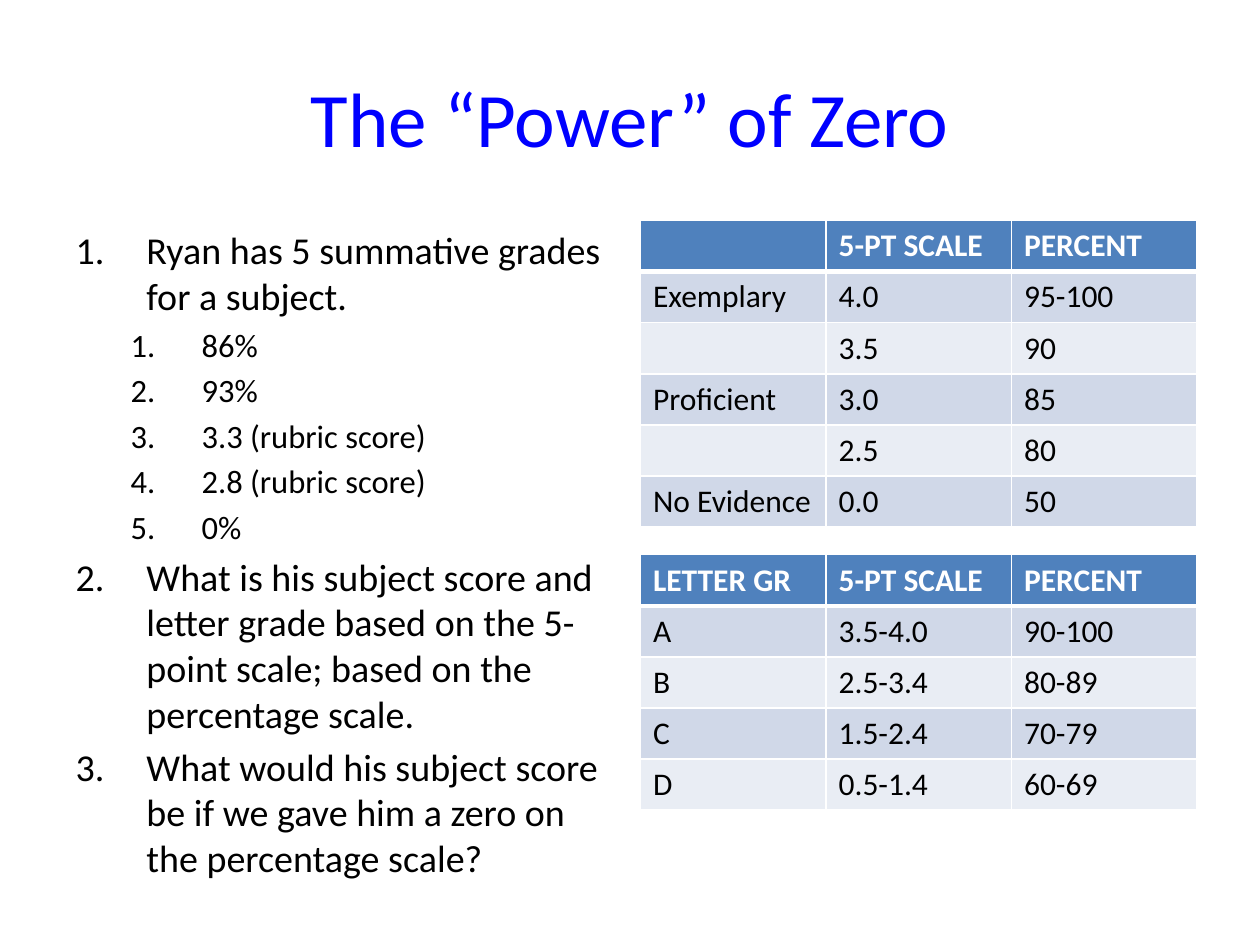
from dataclasses import dataclass

from lxml.etree import SubElement as add_node
from pptx import Presentation
from pptx.dml.color import RGBColor as Rgb
from pptx.enum.text import MSO_ANCHOR as Anchor, MSO_AUTO_SIZE as AutoSize, PP_ALIGN as Align
from pptx.oxml.ns import qn
from pptx.util import Pt

# Content
TITLE = "The “Power” of Zero"
QUESTIONS = [  # (level, text)
    (0, "Ryan has 5 summative grades for a subject."),
    (1, "86%"),
    (1, "93%"),
    (1, "3.3 (rubric score)"),
    (1, "2.8 (rubric score)"),
    (1, "0%"),
    (0, "What is his subject score and letter grade based on the 5-point scale; "
        "based on the percentage scale."),
    (0, "What would his subject score be if we gave him a zero on the percentage scale?"),
]
RUBRIC = [
    ("", "5-PT SCALE", "PERCENT"),
    ("Exemplary", "4.0", "95-100"),
    ("", "3.5", "90"),
    ("Proficient", "3.0", "85"),
    ("", "2.5", "80"),
    ("No Evidence", "0.0", "50"),
]
LETTERS = [
    ("LETTER GR", "5-PT SCALE", "PERCENT"),
    ("A", "3.5-4.0", "90-100"),
    ("B", "2.5-3.4", "80-89"),
    ("C", "1.5-2.4", "70-79"),
    ("D", "0.5-1.4", "60-69"),
]


@dataclass(frozen=True)
class Theme:
    font: str = "Calibri"
    title: str = "0000FF"
    text: str = "000000"
    white: str = "FFFFFF"
    header: str = "4F81BD"
    bands: tuple = ("D0D8E8", "E9EDF4")
    title_size: float = 44
    list_sizes: tuple = (21.7, 18.6)
    table_size: float = 18
    thin: float = 1
    thick: float = 3


THEME = Theme()

# Layout, in points
MARGIN, TOP, COLUMN_WIDTH = 36, 126, 318
TABLE_LEFT = 720 - MARGIN - COLUMN_WIDTH
ROW_HEIGHT = 29.2
LETTERS_TOP = 317
LIST_INDENTS, HANGING = (40.5, 72), 40.5


def write(para, text, size, color=THEME.text, bold=False, align=None):
    para.alignment = align
    span = para.add_run()
    span.text = text
    span.font.name = THEME.font
    span.font.size = Pt(size)
    span.font.bold = bold
    span.font.color.rgb = Rgb.from_string(color)


def place(box, left, top, width, height):
    box.left, box.top, box.width, box.height = map(Pt, (left, top, width, height))
    box.text_frame.auto_size = AutoSize.NONE
    box.text_frame.word_wrap = True


def number(para, level):
    para.level = level
    props = para._p.get_or_add_pPr()
    props.set("marL", str(Pt(LIST_INDENTS[level])))
    props.set("indent", str(-Pt(HANGING)))
    add_node(props, qn("a:buFont"), typeface=THEME.font)
    add_node(props, qn("a:buAutoNum"), type="arabicPeriod")


def border(cell, row):
    widths = {
        "lnL": THEME.thin,
        "lnR": THEME.thin,
        "lnT": THEME.thick if row == 1 else THEME.thin,
        "lnB": THEME.thick if row == 0 else THEME.thin,
    }
    props = cell._tc.get_or_add_tcPr()
    for side, width in widths.items():
        line = add_node(props, qn(f"a:{side}"), w=str(Pt(width)))
        add_node(add_node(line, qn("a:solidFill")), qn("a:srgbClr"), val=THEME.white)


def add_scale(page, rows, top):
    frame = page.shapes.add_table(len(rows), len(rows[0]), Pt(TABLE_LEFT), Pt(top),
                                  Pt(COLUMN_WIDTH), Pt(ROW_HEIGHT * len(rows)))
    for r, values in enumerate(rows):
        header = r == 0
        fill = THEME.header if header else THEME.bands[(r - 1) % 2]
        for c, value in enumerate(values):
            cell = frame.table.cell(r, c)
            border(cell, r)
            cell.fill.solid()
            cell.fill.fore_color.rgb = Rgb.from_string(fill)
            if value:
                write(cell.text_frame.paragraphs[0], value, THEME.table_size,
                      color=THEME.white if header else THEME.text, bold=header)


def main():
    deck = Presentation()
    deck.slide_width, deck.slide_height = Pt(720), Pt(540)
    page = deck.slides.add_slide(deck.slide_layouts[1])
    title, body = page.placeholders

    # Title
    place(title, MARGIN, 21.6, 648, 90)
    title.text_frame.vertical_anchor = Anchor.MIDDLE
    write(title.text_frame.paragraphs[0], TITLE, THEME.title_size,
          color=THEME.title, align=Align.CENTER)

    # Numbered questions
    place(body, MARGIN, TOP, COLUMN_WIDTH, 356.4)
    for i, (level, text) in enumerate(QUESTIONS):
        frame = body.text_frame
        para = frame.add_paragraph() if i else frame.paragraphs[0]
        number(para, level)
        write(para, text, THEME.list_sizes[level])

    # Grading scales
    add_scale(page, RUBRIC, TOP)
    add_scale(page, LETTERS, LETTERS_TOP)

    deck.save("out.pptx")


if __name__ == "__main__":
    main()
